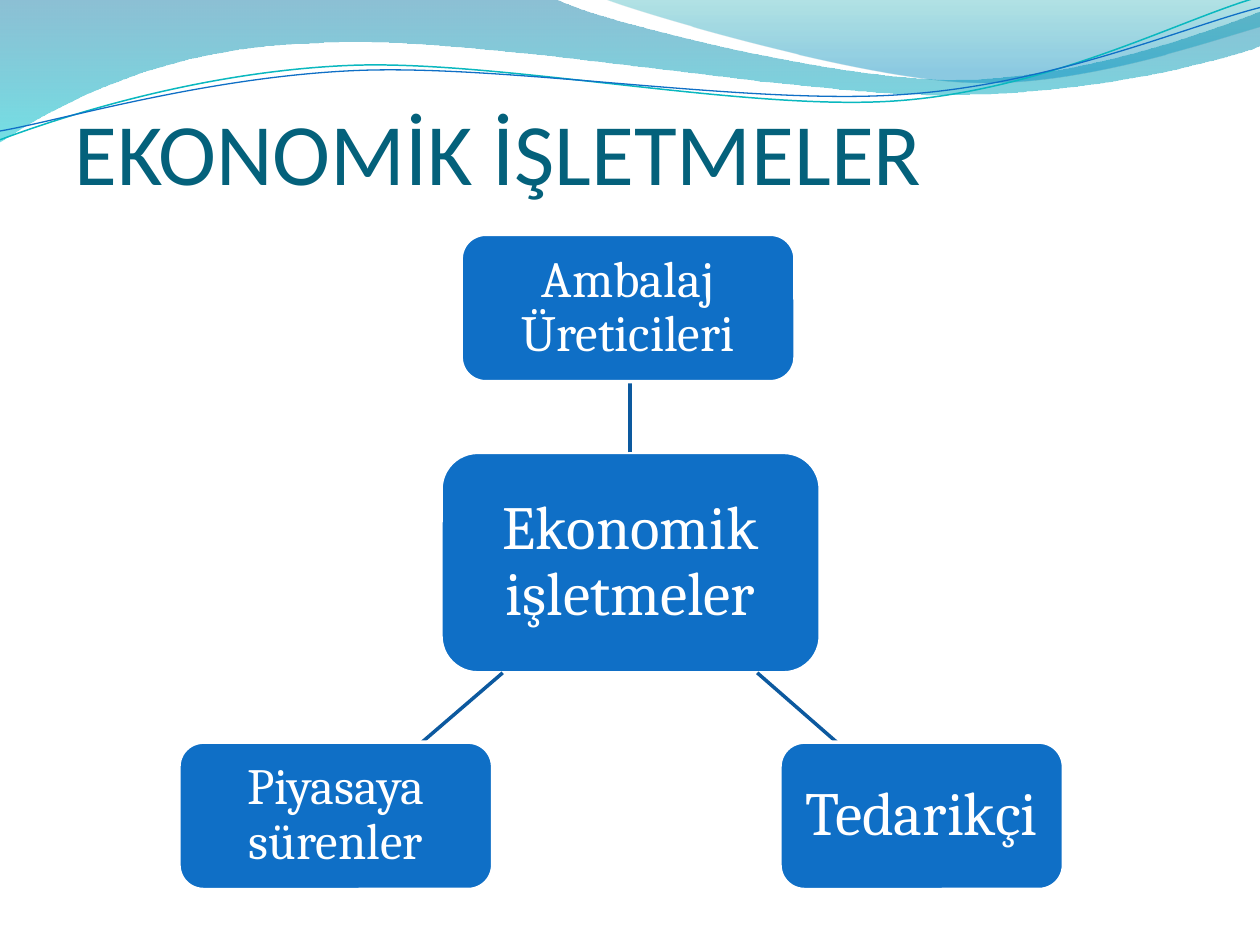
import pptx
import pptx.dml.color
import pptx.enum.shapes
import pptx.enum.text
import pptx.oxml
import pptx.oxml.ns
import pptx.util
from pptx.util import Inches

THEME = {
    "title": "04617B", "box": "0F6FC6", "link": "0C599F", "white": "FFFFFF",
    "title_font": "Calibri", "body_font": "Cambria",
    "title_size": 50, "large": 35, "small": 29,
}
rgb = pptx.dml.color.RGBColor.from_string
qn, nsdecls = pptx.oxml.ns.qn, pptx.oxml.ns.nsdecls("a")


def add_curve(shapes, start, segments, closed):
    """Draw a freeform from 2-value line segments and 6-value Bezier segments."""
    corners = [(Inches(s[i]), Inches(s[i + 1]))
               for s in segments for i in range(0, len(s), 2)]
    builder = shapes.build_freeform(*map(Inches, start))
    builder.add_line_segments(corners, close=closed)
    curve = builder.convert_to_shape()
    curve.shadow.inherit = False
    # Gather the three points of each Bezier segment into one curve command
    lines = iter(list(curve.element.iter(qn("a:lnTo"))))
    for segment in segments:
        line = next(lines)
        if len(segment) == 6:
            bezier = pptx.oxml.parse_xml(f"<a:cubicBezTo {nsdecls}/>")
            line.addprevious(bezier)
            for command in (line, next(lines), next(lines)):
                bezier.append(command[0])
                command.getparent().remove(command)
    return curve


def style_text(frame, text, formats, font_formats, color):
    """Write one paragraph and apply the frame and font formats."""
    for name, value in formats.items():
        setattr(frame, name, value)
    paragraph = frame.paragraphs[0]
    run = paragraph.add_run()
    run.text = text
    for name, value in font_formats.items():
        setattr(run.font, name, value)
    run.font.color.rgb = rgb(color)
    return paragraph


prs = pptx.Presentation()
prs.slide_width, prs.slide_height = Inches(10), Inches(7.5)
slide = prs.slides.add_slide(prs.slide_layouts[5])
shapes = slide.shapes
decoration = []

# Translucent waves: start, segments, gradient stops (position, colour, opacity)
waves = [
    ((0, 0),
     [(4.4, -0.01), (4.76, 0.17, 6.64, 0.63, 7.58, 0.63),
      (8.53, 0.63, 9.58, 0.26, 10, 0.09), (10.01, 0.36),
      (9.83, 0.44, 8.7, 0.76, 7.46, 0.75), (6.22, 0.75, 3.82, 0.28, 2.57, 0.34),
      (1.29, 0.36, 0.46, 0.83, -0.01, 1.13), (0, 0)],
     [(0, "0074A1", 45), (1, "00C6CF", 55)]),
    ((4.79, -0.01),
     [(5.09, 0.11, 6.82, 0.62, 7.69, 0.65), (8.56, 0.69, 9.61, 0.32, 10, 0.21),
      (10, 0), (4.79, -0.01)],
     [(0, "00A1A9", 30), (0.8, "008BBF", 45)]),
]
for start, segments, stops in waves:
    wave = add_curve(shapes, start, segments, True)
    wave.line.fill.background()
    wave.fill.gradient()
    wave.fill.gradient_angle = 270
    for stop, (position, color, _) in zip(wave.fill.gradient_stops, stops):
        stop.position = position
        stop.color.rgb = rgb(color)
    color_nodes = wave.element.spPr.iter(qn("a:srgbClr"))
    for node, (_, _, opacity) in zip(color_nodes, stops):
        node.append(pptx.oxml.parse_xml(
            f'<a:alpha {nsdecls} val="{opacity * 1000}"/>'))
    decoration.append(wave)

# Thin lines following the waves
strands = [
    ((0, 1.11),
     [(0.48, 0.93, 1.58, 0.57, 2.77, 0.52), (3.95, 0.47, 5.93, 0.89, 7.13, 0.8),
      (8.33, 0.71, 9.38, 0.15, 9.98, -0.02)], "0AB8BF", 0.85),
    ((0, 1.04),
     [(0.47, 0.96, 1.64, 0.61, 2.83, 0.56), (4.03, 0.51, 5.97, 0.84, 7.17, 0.75),
      (8.36, 0.67, 9.41, 0.21, 10, 0.06)], "0F6FC6", 0.75),
]
for start, segments, color, width in strands:
    strand = add_curve(shapes, start, segments, False)
    strand.fill.background()
    strand.line.color.rgb = rgb(color)
    strand.line.width = pptx.util.Pt(width)
    decoration.append(strand)

# The decoration belongs to the master, behind its placeholders
master_front = prs.slide_master.placeholders[0].element
for number, curve in enumerate(decoration, start=20):
    curve.element.nvSpPr.cNvPr.set("id", str(number))
    master_front.addprevious(curve.element)

# Title
title = shapes.title
title.left, title.top, title.width, title.height = map(Inches, (0.59, 0.36, 9, 1.25))
heading = style_text(
    title.text_frame, "EKONOMİK İŞLETMELER",
    {"margin_left": 0, "margin_right": 0, "margin_top": Inches(0.05),
     "margin_bottom": 0, "word_wrap": True,
     "auto_size": pptx.enum.text.MSO_AUTO_SIZE.NONE,
     "vertical_anchor": pptx.enum.text.MSO_ANCHOR.BOTTOM},
    {"name": THEME["title_font"], "size": pptx.util.Pt(THEME["title_size"])},
    THEME["title"])
heading.alignment = pptx.enum.text.PP_ALIGN.LEFT

# Hub and spokes: text, box, size, margin, link from the hub
businesses = [
    ("Ekonomik işletmeler", (3.5, 3.59, 3.01, 1.75), "large", 0.1, None),
    ("Ambalaj Üreticileri", (3.66, 1.86, 2.65, 1.17), "small", 0.08, (5, 3.59, 5, 3.03)),
    ("Tedarikçi", (6.19, 5.89, 2.25, 1.17), "large", 0.1, (6.01, 5.34, 6.64, 5.89)),
    ("Piyasaya sürenler", (1.42, 5.89, 2.49, 1.17), "small", 0.08, (3.99, 5.34, 3.35, 5.89)),
]
for text, bounds, size, margin, ends in businesses:
    if ends:
        link = shapes.add_connector(
            pptx.enum.shapes.MSO_CONNECTOR.STRAIGHT, *map(Inches, ends))
        link.line.color.rgb = rgb(THEME["link"])
        link.line.width = pptx.util.Pt(2)
        link.element.spPr.append(pptx.oxml.parse_xml(f"<a:effectLst {nsdecls}/>"))
    business = shapes.add_shape(
        pptx.enum.shapes.MSO_SHAPE.ROUNDED_RECTANGLE, *map(Inches, bounds))
    business.shadow.inherit = False
    business.fill.solid()
    business.fill.fore_color.rgb = rgb(THEME["box"])
    business.line.color.rgb = rgb(THEME["white"])
    business.line.width = pptx.util.Pt(2)
    formats = {f"margin_{side}": Inches(margin)
               for side in ("left", "right", "top", "bottom")}
    formats["word_wrap"] = True
    formats["vertical_anchor"] = pptx.enum.text.MSO_ANCHOR.MIDDLE
    label = style_text(
        business.text_frame, text, formats,
        {"name": THEME["body_font"], "size": pptx.util.Pt(THEME[size])},
        THEME["white"])
    label.alignment = pptx.enum.text.PP_ALIGN.CENTER
    label.line_spacing = 0.9

prs.save("out.pptx")
